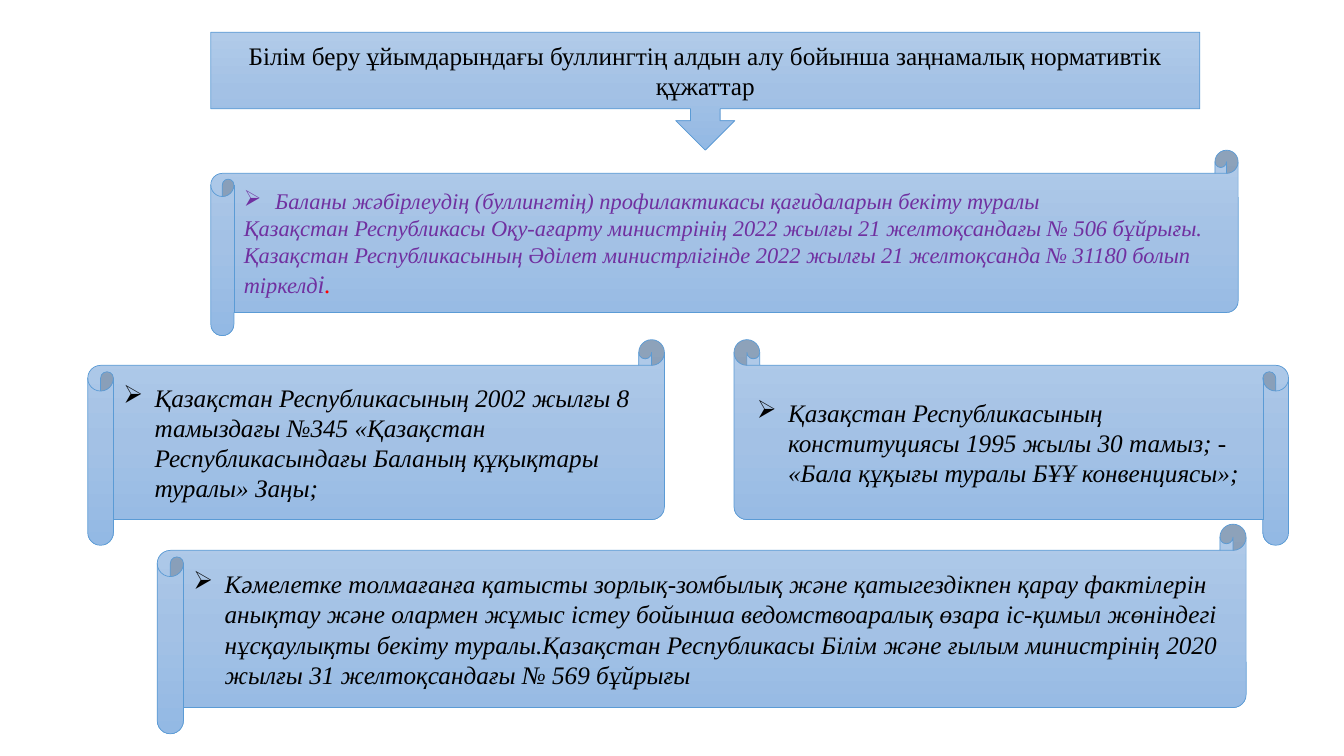
from copy import deepcopy
from dataclasses import dataclass, field
from typing import Any

from lxml.etree import SubElement as SubEl
from pptx import Presentation
from pptx.dml.color import RGBColor as Rgb
from pptx.enum.shapes import MSO_SHAPE as Kind
from pptx.enum.text import MSO_ANCHOR as Anchor, PP_ALIGN as Align
from pptx.oxml.ns import qn
from pptx.util import Inches, Pt


@dataclass(frozen=True)
class Theme:
    face: str = "Times New Roman"
    fill: tuple[str, ...] = ("B1CBE9", "A3C1E5", "93B9E4")
    edge: str = "5B9BD5"
    black: str = "000000"
    purple: str = "7030A0"
    red: str = "FF0000"
    large: int = 18
    small: int = 16
    width: float = 0.5
    indent: float = 0.31
    mark: str = "➢"


THEME = Theme()


@dataclass(frozen=True)
class Run:
    text: str
    size: int = THEME.large
    color: str = THEME.black
    slant: bool = True


@dataclass(frozen=True)
class Para:
    runs: tuple[Run, ...]
    mark: bool = True
    align: Align = Align.LEFT


@dataclass(frozen=True)
class Panel:
    left: float
    top: float
    width: float
    height: float
    paras: tuple[Para, ...]
    kind: Kind = Kind.HORIZONTAL_SCROLL
    attrs: dict[str, str] = field(default_factory=dict)


PANELS = (
    Panel(2.09, 0.32, 9.81, 1.17, (
        Para((Run("Білім беру ұйымдарындағы буллингтің алдын алу бойынша "
                  "заңнамалық нормативтік құжаттар", slant=False),),
             mark=False, align=Align.CENTER),
    ), Kind.DOWN_ARROW_CALLOUT),
    Panel(2.09, 1.49, 10.19, 1.84, (
        Para((Run("Баланы жәбірлеудің (буллингтің) профилактикасы "
                  "қағидаларын бекіту туралы", THEME.small, THEME.purple),)),
        Para((
            Run("Қазақстан Республикасы Оқу-ағарту министрінің 2022 жылғы "
                "21 желтоқсандағы № 506 бұйрығы. Қазақстан Республикасының "
                "Әділет министрлігінде 2022 жылғы 21 желтоқсанда № 31180 "
                "болып тіркелд", THEME.small, THEME.purple),
            Run("і", color=THEME.purple),
            Run(".", color=THEME.red),
        ), mark=False),
    )),
    Panel(7.28, 3.37, 5.5, 2.04, (
        Para((Run("Қазақстан Республикасының конституциясы 1995 жылы 30 тамыз; "
                  "- «Бала құқығы туралы БҰҰ конвенциясы»;"),)),
    ), attrs={"rot": "10800000", "flipV": "1"}),
    Panel(0.87, 3.37, 5.72, 2.04, (
        Para((Run("Қазақстан Республикасының 2002 жылғы 8 тамыздағы №345 "
                  "«Қазақстан Республикасындағы Баланың құқықтары туралы» "
                  "Заңы;"),)),
    )),
    Panel(1.56, 5.2, 10.8, 2.08, (
        Para((Run("Кәмелетке толмағанға қатысты зорлық-зомбылық және "
                  "қатыгездікпен қарау фактілерін анықтау және олармен жұмыс "
                  "істеу бойынша ведомствоаралық өзара іс-қимыл жөніндегі "
                  "нұсқаулықты бекіту туралы.Қазақстан Республикасы Білім және "
                  "ғылым министрінің 2020 жылғы 31 желтоқсандағы № 569 "
                  "бұйрығы"),)),
    )),
)


def put(item: Any, values: dict[str, Any]) -> None:
    for name, value in values.items():
        setattr(item, name, value)


def paint(shape: Any) -> None:
    shape.shadow.inherit = False
    shape.fill.gradient()
    shape.fill.gradient_angle = 270
    first = shape._element.spPr.find(".//" + qn("a:gs"))
    first.addnext(deepcopy(first))
    last = len(THEME.fill) - 1
    for rank, (stop, tint) in enumerate(zip(shape.fill.gradient_stops, THEME.fill)):
        stop.color.rgb = Rgb.from_string(tint)
        stop.position = rank / last
    shape.line.color.rgb = Rgb.from_string(THEME.edge)
    shape.line.width = Pt(THEME.width)


def write(line: Any, para: Para) -> None:
    line.alignment = para.align
    if para.mark:
        props = line._p.get_or_add_pPr()
        indent = Inches(THEME.indent)
        props.set("marL", str(indent))
        props.set("indent", str(-indent))
        SubEl(props, qn("a:buChar")).set("char", THEME.mark)
    for part in para.runs:
        run = line.add_run()
        run.text = part.text
        put(run.font, {"name": THEME.face, "size": Pt(part.size), "italic": part.slant})
        run.font.color.rgb = Rgb.from_string(part.color)


def draw(slide: Any, panel: Panel) -> None:
    box = map(Inches, (panel.left, panel.top, panel.width, panel.height))
    shape = slide.shapes.add_shape(panel.kind, *box)
    for name, value in panel.attrs.items():
        shape._element.spPr.xfrm.set(name, value)
    paint(shape)
    frame = shape.text_frame
    put(frame, {"word_wrap": True, "vertical_anchor": Anchor.MIDDLE})
    for rank, para in enumerate(panel.paras):
        write(frame.add_paragraph() if rank else frame.paragraphs[0], para)


def main() -> None:
    deck = Presentation()
    put(deck, {"slide_width": Inches(13.33), "slide_height": Inches(7.5)})
    slide = deck.slides.add_slide(deck.slide_layouts[6])
    for panel in PANELS:
        draw(slide, panel)
    deck.save("out.pptx")


if __name__ == "__main__":
    main()
